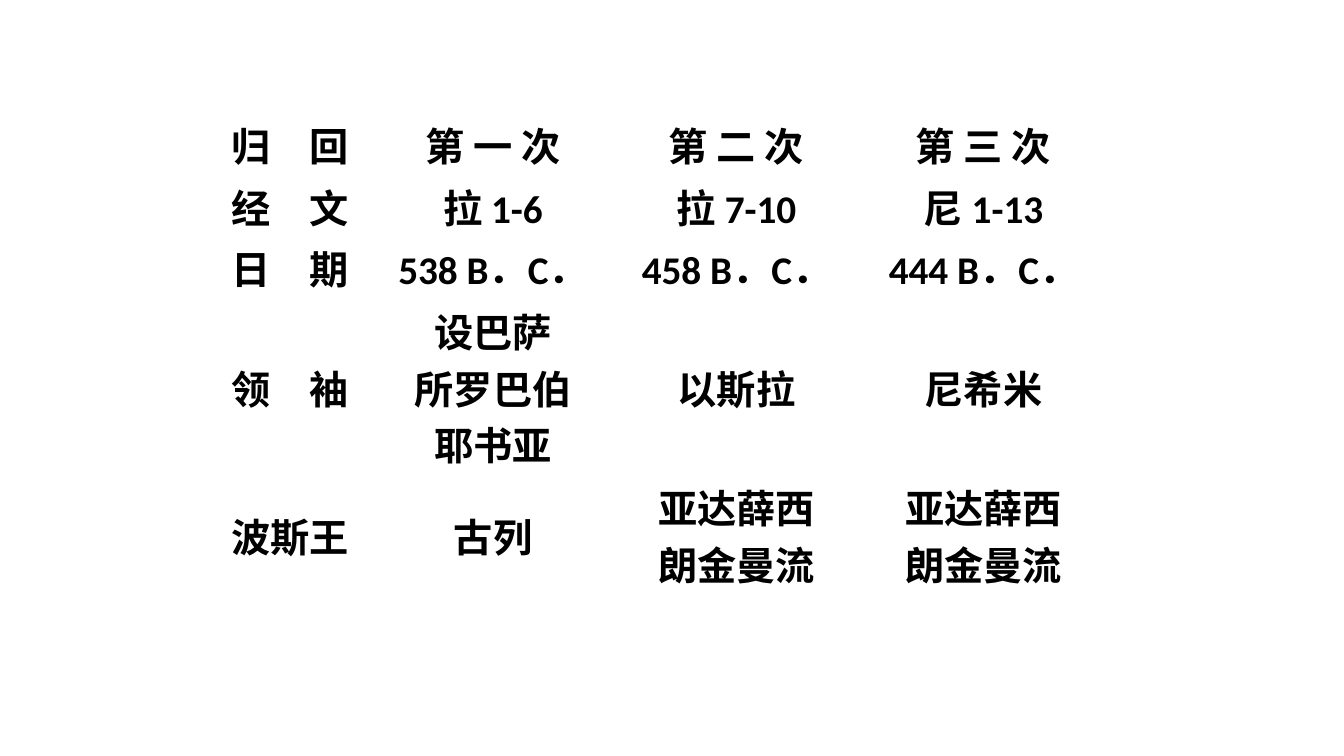
from pptx import Presentation
from pptx.dml.color import RGBColor
from pptx.enum.text import MSO_ANCHOR, PP_ALIGN
from pptx.util import Inches, Pt

BLACK = RGBColor(0, 0, 0)
FONT = "Calibri"

TABLE_LEFT, TABLE_TOP = 2.1, 1.13
COLUMN_WIDTHS = [1.56, 2.46, 2.37, 2.53]
ROW_HEIGHTS = [0.61, 0.61, 0.61, 1.76, 1.18]

RETURNS = [
    ["归　回", "第 一 次", "第 二 次", "第 三 次"],
    ["经　文", "拉 1-6", "拉 7-10", "尼 1-13"],
    ["日　期", "538 B．C．", "458 B．C．", "444 B．C．"],
    ["领　袖", "设巴萨\n所罗巴伯\n耶书亚", "以斯拉", "尼希米"],
    ["波斯王", "古列", "亚达薛西\n朗金曼流", "亚达薛西\n朗金曼流"],
]


def write_text(paragraph, text, size=28, bold=True, color=BLACK, align=PP_ALIGN.CENTER):
    """Fill the paragraph; a newline in the text becomes a line break."""
    paragraph.text = text
    paragraph.alignment = align
    for run in paragraph.runs:
        run.font.name = FONT
        run.font.size = Pt(size)
        run.font.bold = bold
        run.font.color.rgb = color


def fill_cell(cell, text):
    cell.fill.background()
    cell.vertical_anchor = MSO_ANCHOR.MIDDLE
    cell.margin_left = cell.margin_right = 0
    cell.margin_top = cell.margin_bottom = 0
    write_text(cell.text_frame.paragraphs[0], text)


def add_plain_table(slide, rows):
    table = slide.shapes.add_table(
        len(ROW_HEIGHTS), len(COLUMN_WIDTHS),
        Inches(TABLE_LEFT), Inches(TABLE_TOP),
        Inches(sum(COLUMN_WIDTHS)), Inches(sum(ROW_HEIGHTS)),
    ).table
    table.first_row = table.horz_banding = False
    for column, width in zip(table.columns, COLUMN_WIDTHS):
        column.width = Inches(width)
    for row, height, texts in zip(table.rows, ROW_HEIGHTS, rows):
        row.height = Inches(height)
        for cell, text in zip(row.cells, texts):
            fill_cell(cell, text)


def main():
    presentation = Presentation()
    presentation.slide_width = Inches(13.33)
    presentation.slide_height = Inches(7.5)
    slide = presentation.slides.add_slide(presentation.slide_layouts[6])
    add_plain_table(slide, RETURNS)
    presentation.save("out.pptx")


if __name__ == "__main__":
    main()
